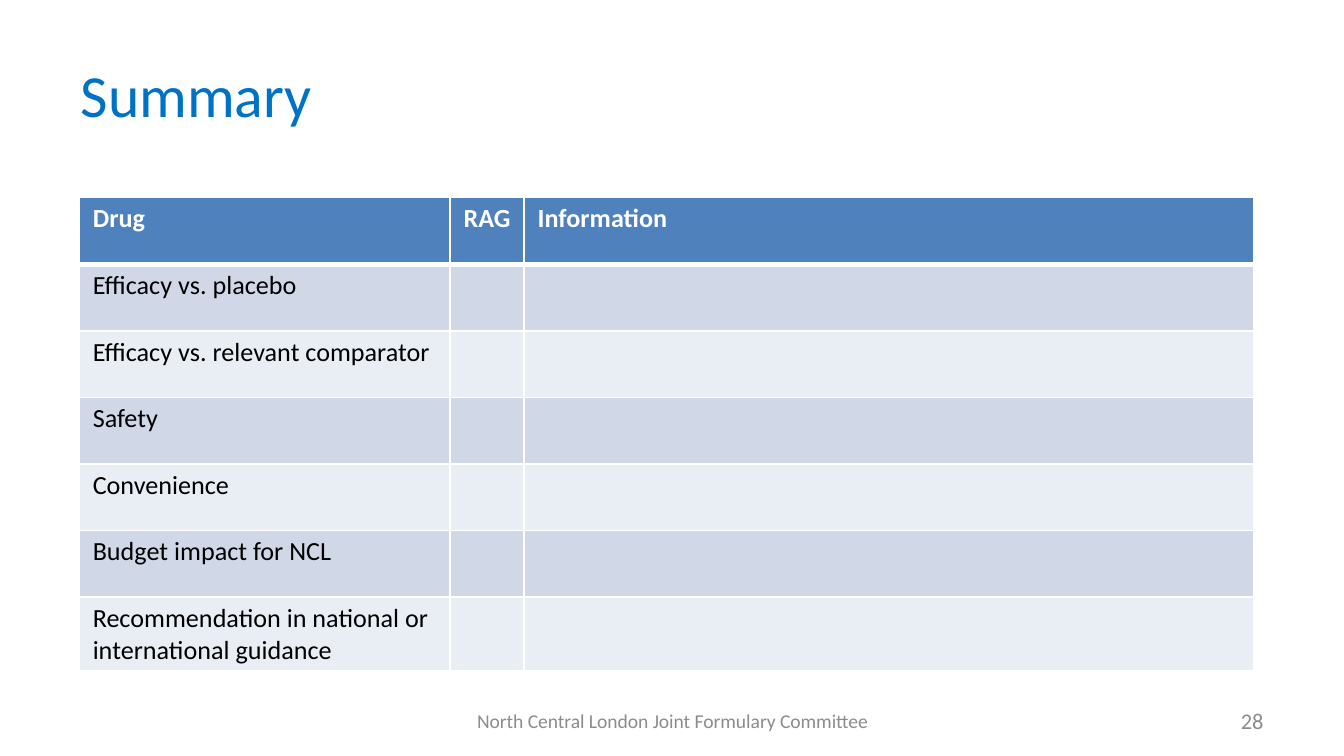
"""Build the drug review summary slide with its RAG rating table."""
from lxml.etree import SubElement
from pptx import Presentation
from pptx.dml.color import RGBColor
from pptx.enum.text import MSO_ANCHOR, PP_ALIGN
from pptx.oxml.ns import qn
from pptx.util import Inches, Pt


def style(paragraph, size, color, bold=False, align=PP_ALIGN.LEFT):
    """Format one paragraph."""
    paragraph.alignment = align
    font = paragraph.font
    font.name, font.size, font.bold = "Calibri", Pt(size), bold
    font.color.rgb = RGBColor.from_string(color)


def add_borders(cell, color, widths):
    """Draw the given cell edges, before the fill is set."""
    properties = cell._tc.get_or_add_tcPr()
    for edge, width in widths.items():
        line = SubElement(properties, qn(f"a:{edge}"), w=str(Pt(width)))
        fill = SubElement(line, qn("a:solidFill"))
        SubElement(fill, qn("a:srgbClr"), val=color)


presentation = Presentation()
presentation.slide_width = Inches(10)
presentation.slide_height = Inches(10) * 9 // 16
slide = presentation.slides.add_slide(presentation.slide_layouts[5])

title = slide.shapes.title
title.left, title.top = Inches(0.5), Inches(0.23)
title.width, title.height = Inches(9), Inches(0.94)
title.text_frame.text = "Summary"
title.text_frame.vertical_anchor = MSO_ANCHOR.MIDDLE
style(title.text_frame.paragraphs[0], 32, "0072C6")

footers = [
    ("North Central London Joint Formulary Committee", 3.42, 3.17, 10.5, PP_ALIGN.CENTER),
    ("28", 7.17, 2.33, 12, PP_ALIGN.RIGHT),
]
for text, left, width, size, align in footers:
    footer = slide.shapes.add_textbox(Inches(left), Inches(5.21), Inches(width), Inches(0.3))
    frame = footer.text_frame
    frame.word_wrap = True
    frame.vertical_anchor = MSO_ANCHOR.MIDDLE
    frame.text = text
    style(frame.paragraphs[0], size, "8C8C8C", align=align)

rows = [
    ("Drug", "RAG", "Information"),
    ("Efficacy vs. placebo", "", ""),
    ("Efficacy vs. relevant comparator", "", ""),
    ("Safety", "", ""),
    ("Convenience", "", ""),
    ("Budget impact for NCL", "", ""),
    ("Recommendation in national or international guidance", "", ""),
]
column_widths = [2.76, 0.55, 5.43]
summary = slide.shapes.add_table(
    len(rows), len(column_widths), Inches(0.59), Inches(1.47),
    Inches(sum(column_widths)), Inches(3.47),
).table
for column, width in zip(summary.columns, column_widths):
    column.width = Inches(width)

for row_index, row in enumerate(rows):
    header = row_index == 0
    band = "4F81BD" if header else ("E9EDF4", "D0D8E8")[row_index % 2]
    for column_index, text in enumerate(row):
        cell = summary.cell(row_index, column_index)
        cell.margin_left = cell.margin_right = Inches(0.1)
        cell.margin_top = cell.margin_bottom = Inches(0.04)
        if header:
            add_borders(cell, "FFFFFF", {"lnL": 1, "lnR": 1, "lnT": 1, "lnB": 3})
        cell.fill.solid()
        cell.fill.fore_color.rgb = RGBColor.from_string(band)
        cell.text = text
        style(cell.text_frame.paragraphs[0], 14, "FFFFFF" if header else "000000", header)

presentation.save("out.pptx")
